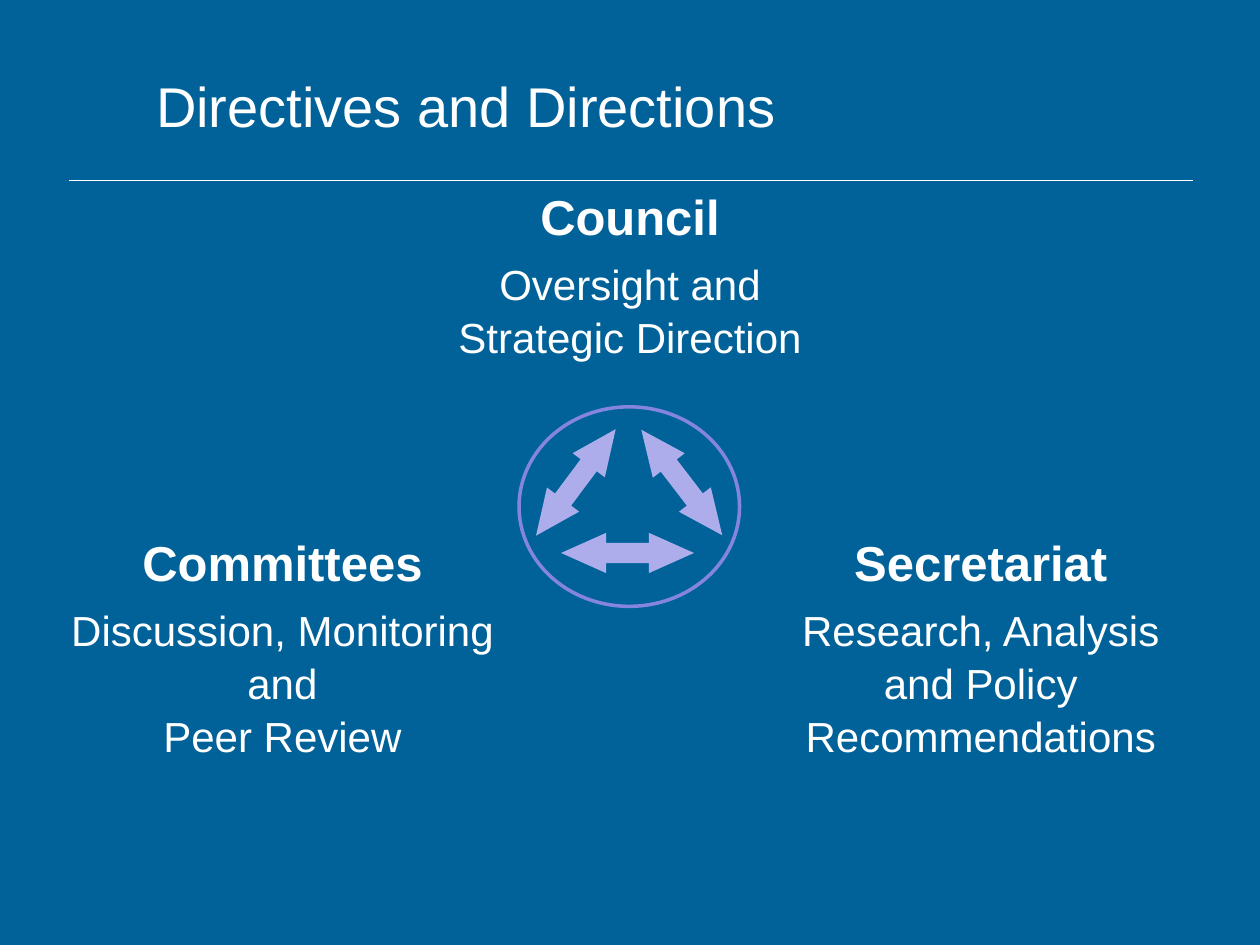
import pptx
import pptx.util
from pptx.dml.color import RGBColor
from pptx.enum.shapes import MSO_CONNECTOR, MSO_SHAPE
from pptx.enum.text import MSO_ANCHOR, PP_ALIGN
from lxml import etree

Pt = pptx.util.Pt
COLORS = {
    "background": "006299",
    "text": "FFFFFF",
    "ring": "8585E0",
    "arrow": "ADADEB",
}
HEADING_HEIGHT = 41.5
LINE_SPACING = 1.05


def color(name):
    return RGBColor.from_string(COLORS[name])


def format_paragraph(paragraph, size, bold, alignment):
    paragraph.alignment = alignment
    paragraph.font.name = "Arial"
    paragraph.font.size = Pt(size)
    paragraph.font.bold = bold
    paragraph.font.color.rgb = color("text")


def add_title(slide, text, left, top, width, height):
    title = slide.shapes.title
    title.left, title.top, title.width, title.height = map(Pt, (left, top, width, height))
    title.text_frame.text = text
    title.text_frame.vertical_anchor = MSO_ANCHOR.MIDDLE
    format_paragraph(title.text_frame.paragraphs[0], 32, False, PP_ALIGN.LEFT)


def add_rule(slide, left, top, width):
    rule = slide.shapes.add_connector(
        MSO_CONNECTOR.STRAIGHT, Pt(left), Pt(top), Pt(left + width), Pt(top))
    rule.line.color.rgb = color("text")
    rule.line.width = Pt(0.5)
    etree.SubElement(rule._element.spPr, pptx.oxml.ns.qn("a:effectLst"))


def add_centered_text(slide, text, size, bold, left, top, width, height):
    box = slide.shapes.add_textbox(Pt(left), Pt(top), Pt(width), Pt(height))
    box.text_frame.word_wrap = True
    paragraph = box.text_frame.paragraphs[0]
    paragraph.text = text
    paragraph.line_spacing = LINE_SPACING
    format_paragraph(paragraph, size, bold, PP_ALIGN.CENTER)


def add_body(slide, heading, description, left, top, width, height):
    """Place a body's name with its role underneath."""
    add_centered_text(slide, heading, 28, True, left, top, width, HEADING_HEIGHT)
    add_centered_text(slide, description, 24, False, left, top + HEADING_HEIGHT,
                      width, height - HEADING_HEIGHT)


def add_cycle(slide, left, top, width, height):
    """Draw a ring holding three double arrows that form a triangle."""
    ring = slide.shapes.add_shape(
        MSO_SHAPE.OVAL, Pt(left), Pt(top), Pt(width), Pt(height))
    ring.shadow.inherit = False
    ring.fill.background()
    ring.line.color.rgb = color("ring")
    ring.line.width = Pt(2)

    arrow_width, arrow_height = 76, 23
    # Arrow centres are offsets from the top left of the ring.
    for center_x, center_y, rotation in (
            (93, 43.2, 232.5), (32.5, 43.2, 306.8), (62, 83.5, 0)):
        arrow = slide.shapes.add_shape(
            MSO_SHAPE.LEFT_RIGHT_ARROW,
            Pt(left + center_x - arrow_width / 2),
            Pt(top + center_y - arrow_height / 2),
            Pt(arrow_width), Pt(arrow_height))
        arrow.adjustments[0] = 0.5
        arrow.adjustments[1] = 1.12
        arrow.rotation = rotation
        arrow.shadow.inherit = False
        arrow.fill.solid()
        arrow.fill.fore_color.rgb = color("arrow")
        arrow.line.fill.background()


def main():
    presentation = pptx.Presentation()
    presentation.slide_width, presentation.slide_height = Pt(720), Pt(540)
    slide = presentation.slides.add_slide(presentation.slide_layouts[5])
    slide.background.fill.solid()
    slide.background.fill.fore_color.rgb = color("background")

    add_title(slide, "Directives and Directions", 82, 34.5, 647, 51)
    add_rule(slide, 39.5, 103, 642)
    add_cycle(slide, 296.6, 232.5, 126, 114)
    for heading, description, box in (
            ("Council", "Oversight and\nStrategic Direction",
             (189, 101.3, 342, 107)),
            ("Committees", "Discussion, Monitoring and\nPeer Review",
             (32.4, 299, 258, 136)),
            ("Secretariat", "Research, Analysis\nand Policy Recommendations",
             (428.4, 299, 264, 136))):
        add_body(slide, heading, description, *box)

    presentation.save("out.pptx")


if __name__ == "__main__":
    main()
